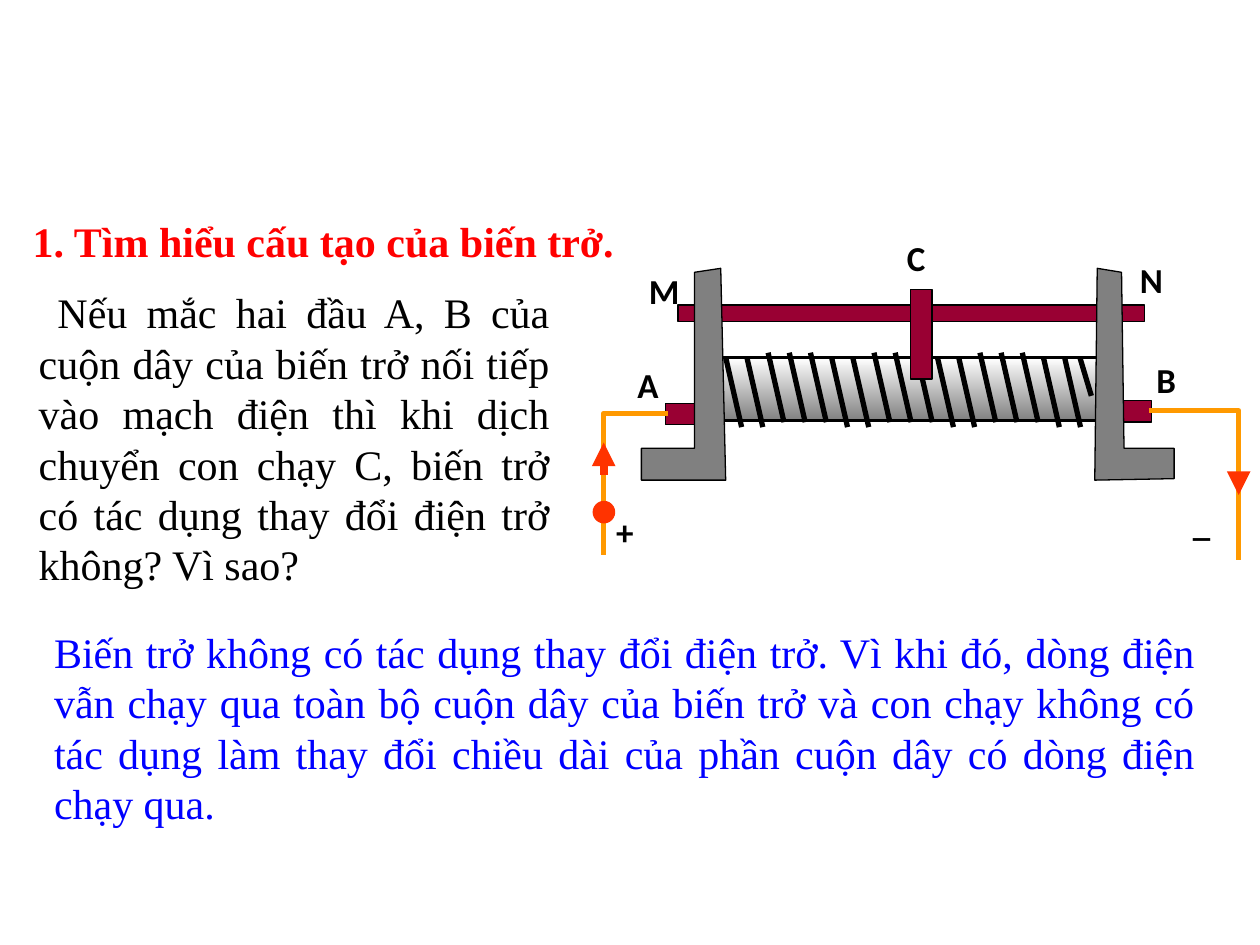
"""Build a slide about how a rheostat is made."""
from lxml.etree import SubElement
from pptx import Presentation
from pptx.dml.color import RGBColor
from pptx.enum.shapes import MSO_CONNECTOR as Link, MSO_SHAPE as Kind
from pptx.enum.text import PP_ALIGN as Align
from pptx.oxml.ns import qn
from pptx.util import Cm, Pt

rgb = RGBColor.from_string


def write(text, box, size, font, color, bold=False, wrap=True):
    """Add a text box and return its paragraph."""
    frame = shapes.add_textbox(*map(Cm, box)).text_frame
    frame.word_wrap = wrap
    para = frame.paragraphs[0]
    para.text = text
    para.font.size, para.font.name, para.font.bold = Pt(size), font, bold
    para.font.color.rgb = rgb(color)
    return para


def style(shape, fill, edge="000000", width=0.75):
    """Set the fill and outline of a shape."""
    shape.shadow.inherit = False
    if fill:
        shape.fill.solid()
        shape.fill.fore_color.rgb = rgb(fill)
    else:
        shape.fill.background()
    shape.line.color.rgb = rgb(edge)
    shape.line.width = Pt(width)


deck = Presentation()
deck.slide_width, deck.slide_height = Cm(25.4), Cm(19.05)
shapes = deck.slides.add_slide(deck.slide_layouts[6]).shapes

serif = "Times New Roman"
write("1. Tìm hiểu cấu tạo của biến trở.", (0.41, 4.22, 12.42, 1.3),
      24, serif, "FF0000", True, False)
task = write("Nếu mắc hai đầu A, B của cuộn dây của biến trở nối tiếp vào mạch điện "
             "thì khi dịch chuyển con chạy C, biến trở có tác dụng thay đổi điện trở "
             "không? Vì sao?", (0.53, 5.66, 10.8, 6.4), 24, serif, "000000")
task.alignment = Align.JUSTIFY
task._p.get_or_add_pPr().set("indent", str(Cm(0.38)))
reply = write("Biến trở không có tác dụng thay đổi điện trở. Vì khi đó, dòng điện vẫn "
              "chạy qua toàn bộ cuộn dây của biến trở và con chạy không có tác dụng làm "
              "thay đổi chiều dài của phần cuộn dây có dòng điện chạy qua.",
              (0.84, 12.5, 23.5, 4.37), 24, serif, "0000FF")
reply.alignment = Align.JUSTIFY

for left, top in [(13.41, 8.13), (22.58, 8.08)]:
    plug = shapes.add_shape(Kind.RECTANGLE, Cm(left), Cm(top), Cm(0.64), Cm(0.43))
    style(plug, "990033")

core = shapes.add_shape(Kind.RECTANGLE, Cm(14.53), Cm(7.21), Cm(7.67), Cm(1.27))
style(core, "FFFFFF", width=1.5)
core.fill.gradient()
core.fill.gradient_angle = 270
for stop, spot, tone in zip(core.fill.gradient_stops, (0, 1), ("FFFFFF", "808080")):
    stop.position, stop.color.rgb = spot, rgb(tone)

turns = []
for i in range(17):
    left, top = 14.63 + 0.427 * i, 7.21 if i % 5 < 2 else 7.11
    turns.append((left, top, left + 0.32, top + 1.4, "000000", 3))
turns.append((21.77, 7.21, 22, 7.98, "000000", 3))
flow = [(12.17, 9.58, 12.17, 8.92, "FF3300", 4.5),
        (24.97, 9.58, 24.97, 9.98, "FF3300", 4.5)]
rod = (13.67, 6.15, 9.4, 0.33)
slide_bar = (18.36, 5.84, 0.43, 1.8)
legs = [[(14.53, 5.41), (14.63, 9.68), (12.93, 9.68), (12.93, 9.04), (14, 9.04), (14, 5.49)],
        [(22.12, 5.41), (22.07, 9.68), (23.67, 9.65), (23.67, 9.04), (22.66, 9.04),
         (22.61, 5.49)]]
wires = [[(13.46, 8.33), (12.17, 8.33), (12.17, 11.18)],
         [(23.16, 8.28), (24.97, 8.28), (24.97, 11.28)]]

for step in (turns, [rod], legs, [slide_bar], wires, flow):
    for item in step:
        if step is legs or step is wires:
            spots = [(Cm(x), Cm(y)) for x, y in item]
            pen = shapes.build_freeform(*spots[0])
            pen.add_line_segments(spots[1:], close=step is legs)
            form = pen.convert_to_shape()
            if step is legs:
                style(form, "808080")
            else:
                style(form, None, "FF9900", 3)
        elif step is turns or step is flow:
            *ends, tone, width = item
            line = shapes.add_connector(Link.STRAIGHT, *map(Cm, ends))
            line.line.color.rgb, line.line.width = rgb(tone), Pt(width)
            if step is flow:
                SubElement(line.line._get_or_add_ln(), qn("a:tailEnd"), type="triangle")
            SubElement(line._element.spPr, qn("a:effectLst"))
        else:
            style(shapes.add_shape(Kind.RECTANGLE, *map(Cm, item)), "990033")

dot = shapes.add_shape(Kind.OVAL, Cm(11.96), Cm(10.11), Cm(0.43), Cm(0.43))
style(dot, "FF3300", "FF3300")

for name, left, top in [("C", 18.03, 4.65), ("N", 22.73, 5.08), ("M", 12.83, 5.31),
                        ("A", 12.6, 7.21), ("B", 23.06, 7.11), ("+", 12.17, 10.16),
                        ("_", 23.8, 9.98)]:
    write(name, (left, top, 1.17, 1.09), 20, "Calibri", "000000", True)

deck.save("out.pptx")
